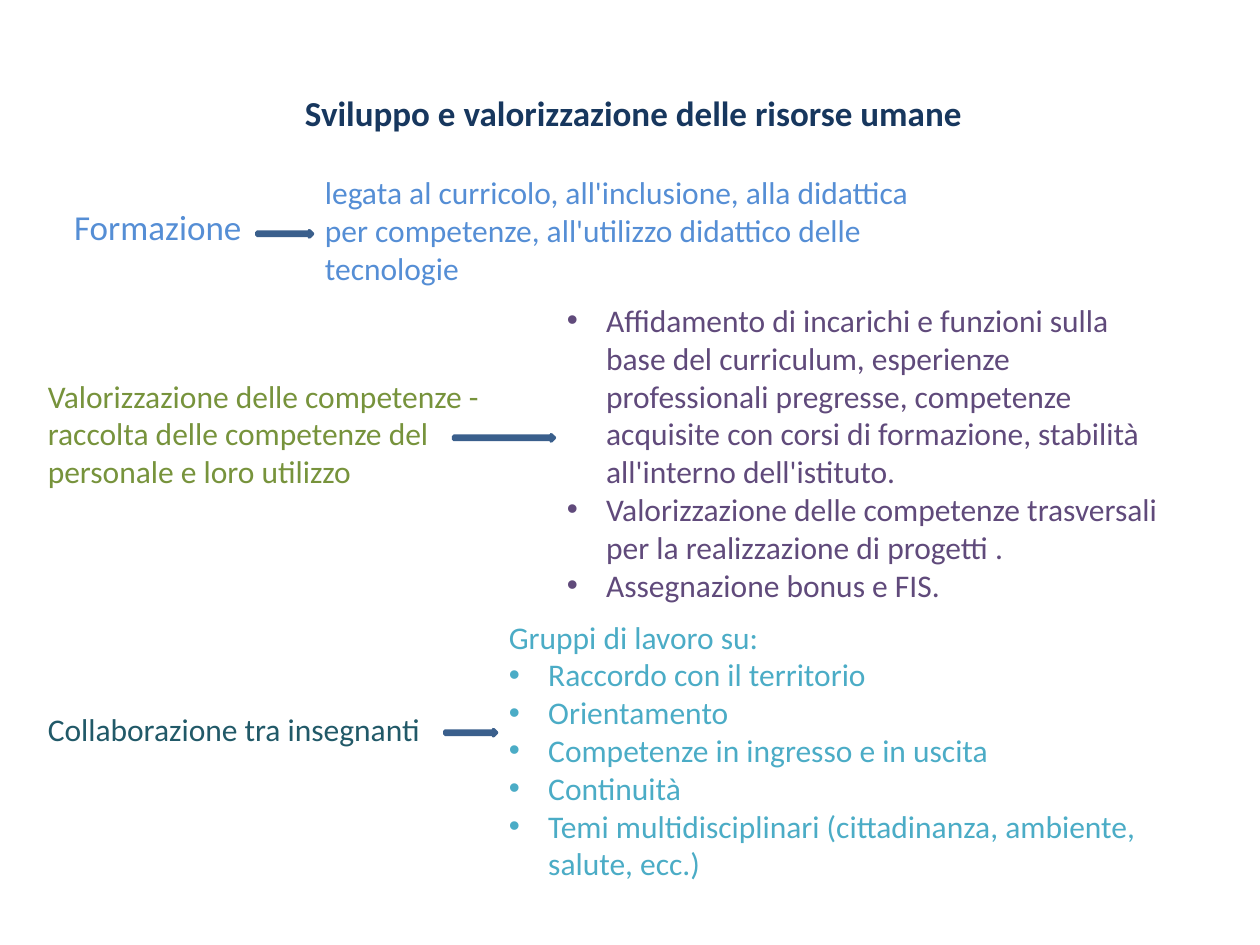
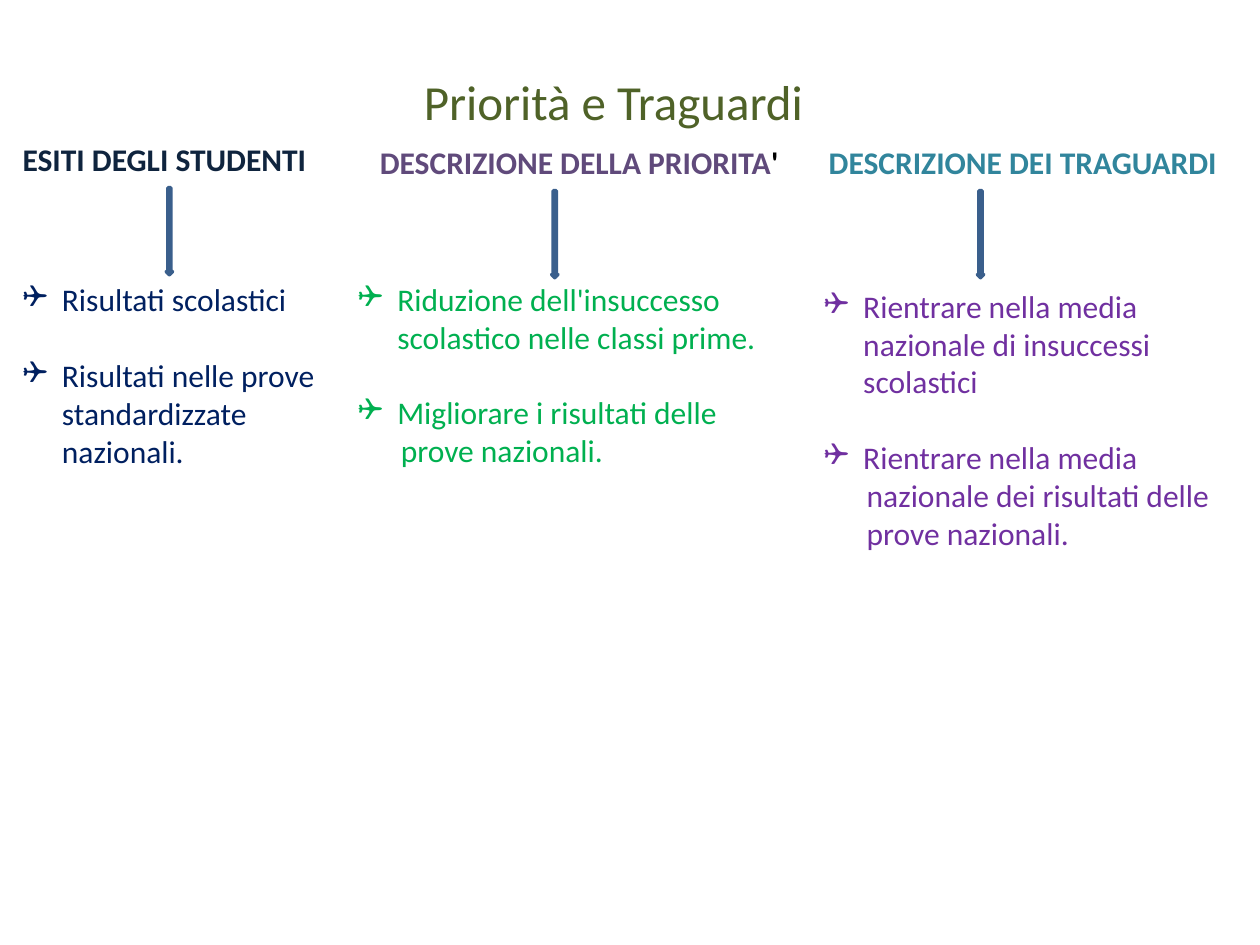
from lxml.etree import SubElement
from pptx import Presentation
from pptx.dml.color import RGBColor
from pptx.enum.shapes import MSO_SHAPE
from pptx.enum.text import MSO_ANCHOR, MSO_AUTO_SIZE, PP_ALIGN
from pptx.oxml.ns import qn
from pptx.util import Pt

FONT = "Calibri"
BODY_SIZE = 18
LINE_HEIGHT = 21.6
INDENT = 22.5
CONTINUATION_INDENT = 24.5
ARROW_THICKNESS = 3.6
ARROW_DROP = 31
ARROW_LENGTH = 49.7

NAVY = RGBColor(0x17, 0x37, 0x5E)
LIGHT_BLUE = RGBColor(0x55, 0x8E, 0xD5)
OLIVE = RGBColor(0x77, 0x93, 0x3C)
DARK_TEAL = RGBColor(0x21, 0x59, 0x68)
PLUM = RGBColor(0x60, 0x4A, 0x7B)
AQUA = RGBColor(0x4B, 0xAC, 0xC6)
DARK_OLIVE = RGBColor(0x4F, 0x62, 0x28)
INK = RGBColor(0x0F, 0x24, 0x3E)
TEAL = RGBColor(0x31, 0x85, 0x9C)
DEEP_BLUE = RGBColor(0x00, 0x20, 0x60)
GREEN = RGBColor(0x00, 0xB0, 0x50)
PURPLE = RGBColor(0x70, 0x30, 0xA0)
BLACK = RGBColor(0, 0, 0)
ARROW_FILL = RGBColor(0x4F, 0x81, 0xBD)
ARROW_LINE = RGBColor(0x3A, 0x5F, 0x8C)

PLAIN, DOT, BOX, SPACED_BOX, CONTINUED = range(5)
BULLETS = {DOT: ("•", "Arial"), BOX: ("❑", "Wingdings"), SPACED_BOX: ("❑", "Wingdings")}

RESOURCES_TITLE = ("Sviluppo e valorizzazione delle risorse umane",
                   (147, 48.6, 430, 32), 20, NAVY, True)
PRIORITIES_TITLE = ("Priorità e Traguardi", (210.5, 37.5, 280, 41), 28, DARK_OLIVE, False)

RESOURCES = [
    {
        "label": [(PLAIN, "Formazione")],
        "label_style": ((35.3, 113.8, 111, 32), LIGHT_BLUE, 20, False),
        "details": [(PLAIN, "legata al curricolo, all'inclusione, alla didattica per competenze, "
                            "all'utilizzo didattico delle tecnologie")],
        "details_style": ((178.6, 95.5, 360, 73), LIGHT_BLUE),
        "arrow_start": (146.9, 131.8),
    },
    {
        "label": [(PLAIN, "Valorizzazione delle competenze -"),
                  (PLAIN, "raccolta delle competenze del personale e loro utilizzo")],
        "label_style": ((20.2, 211.7, 300, 73), OLIVE, BODY_SIZE, True),
        "details": [
            (DOT, "Affidamento di incarichi e funzioni sulla base del curriculum, esperienze "
                  "professionali pregresse, competenze acquisite con corsi di formazione, "
                  "stabilità all'interno dell'istituto."),
            (DOT, "Valorizzazione delle competenze trasversali per la realizzazione di progetti ."),
            (DOT, "Assegnazione bonus e FIS."),
        ],
        "details_style": ((316.8, 168.5, 355, 181), PLUM),
        "arrow_start": (259.2, 248.4),
    },
    {
        "label": [(PLAIN, "Collaborazione tra insegnanti")],
        "label_style": ((20.2, 402.3, 234, 29), DARK_TEAL, BODY_SIZE, False),
        "details": [
            (PLAIN, "Gruppi di lavoro su:"),
            (DOT, "Raccordo con il territorio"),
            (DOT, "Orientamento"),
            (DOT, "Competenze in ingresso e in uscita"),
            (DOT, "Continuità"),
            (DOT, "Temi multidisciplinari (cittadinanza, ambiente, salute, ecc.)"),
        ],
        "details_style": ((283.7, 349.4, 422, 181), AQUA),
        "arrow_start": (254.2, 416.9),
    },
]

PRIORITIES = [
    {
        "heading": [("ESITI DEGLI STUDENTI", INK)],
        "heading_box": (5.8, 76.3, 178, 29),
        "arrow_left": 95,
        "goals": [(BOX, "Risultati scolastici"),
                  (SPACED_BOX, "Risultati nelle prove standardizzate nazionali.")],
        "goals_style": ((5.8, 156.7, 188, 117), DEEP_BLUE),
    },
    {
        "heading": [("DESCRIZIONE DELLA PRIORITA", PLUM), ("'", BLACK)],
        "heading_box": (210, 78, 244, 29),
        "arrow_left": 315.2,
        "goals": [(BOX, "Riduzione dell'insuccesso scolastico nelle classi prime."),
                  (SPACED_BOX, "Migliorare i risultati delle"),
                  (CONTINUED, "prove nazionali.")],
        "goals_style": ((197.5, 156.5, 268.5, 117), GREEN),
    },
    {
        "heading": [("DESCRIZIONE DEI TRAGUARDI", TEAL)],
        "heading_box": (466.5, 78, 238, 29),
        "arrow_left": 558.5,
        "goals": [(BOX, "Rientrare nella media nazionale di insuccessi scolastici"),
                  (SPACED_BOX, "Rientrare nella media"),
                  (CONTINUED, "nazionale dei risultati delle"),
                  (CONTINUED, "prove nazionali.")],
        "goals_style": ((463.7, 160.4, 238.3, 160), PURPLE),
    },
]


def points(box):
    return [Pt(length) for length in box]


def style_font(font, size, color, bold=False):
    font.name = FONT
    font.size = Pt(size)
    font.bold = bold
    font.color.rgb = color


def indent(paragraph, kind):
    properties = paragraph._p.get_or_add_pPr()
    if kind == SPACED_BOX:
        paragraph.space_before = Pt(LINE_HEIGHT)
    if kind in BULLETS:
        symbol, typeface = BULLETS[kind]
        properties.set("marL", str(Pt(INDENT)))
        properties.set("indent", str(-Pt(INDENT)))
        SubElement(properties, qn("a:buFont"), typeface=typeface)
        SubElement(properties, qn("a:buChar"), char=symbol)
    elif kind == CONTINUED:
        properties.set("marL", str(Pt(CONTINUATION_INDENT)))


def add_frame(slide, box, wrap):
    frame = slide.shapes.add_textbox(*points(box)).text_frame
    frame.word_wrap = wrap
    frame.auto_size = MSO_AUTO_SIZE.SHAPE_TO_FIT_TEXT
    return frame


def add_paragraphs(slide, lines, box, color, size=BODY_SIZE, wrap=True):
    frame = add_frame(slide, box, wrap)
    for number, (kind, text) in enumerate(lines):
        paragraph = frame.add_paragraph() if number else frame.paragraphs[0]
        paragraph.text = text
        indent(paragraph, kind)
        style_font(paragraph.font, size, color)


def add_heading(slide, parts, box):
    paragraph = add_frame(slide, box, False).paragraphs[0]
    for text, color in parts:
        run = paragraph.add_run()
        run.text = text
        style_font(run.font, BODY_SIZE, color, True)


def add_arrow(slide, preset, box):
    arrow = slide.shapes.add_shape(preset, *points(box))
    arrow.shadow.inherit = False
    arrow.fill.solid()
    arrow.fill.fore_color.rgb = ARROW_FILL
    arrow.line.color.rgb = ARROW_LINE
    arrow.line.width = Pt(2)


def add_titled_slide(deck, text, box, size, color, bold):
    slide = deck.slides.add_slide(deck.slide_layouts[5])
    title = slide.shapes.title
    title.left, title.top, title.width, title.height = points(box)
    frame = title.text_frame
    frame.text = text
    frame.word_wrap = True
    frame.auto_size = MSO_AUTO_SIZE.NONE
    frame.vertical_anchor = MSO_ANCHOR.TOP
    paragraph = frame.paragraphs[0]
    paragraph.alignment = PP_ALIGN.CENTER
    style_font(paragraph.font, size, color, bold)
    return slide


def build_resources(deck):
    slide = add_titled_slide(deck, *RESOURCES_TITLE)
    for resource in RESOURCES:
        add_paragraphs(slide, resource["label"], *resource["label_style"])
        add_paragraphs(slide, resource["details"], *resource["details_style"])
        left, top = resource["arrow_start"]
        details_left = resource["details_style"][0][0]
        add_arrow(slide, MSO_SHAPE.RIGHT_ARROW,
                  (left, top, details_left - left, ARROW_THICKNESS))


def build_priorities(deck):
    slide = add_titled_slide(deck, *PRIORITIES_TITLE)
    for priority in PRIORITIES:
        add_heading(slide, priority["heading"], priority["heading_box"])
        add_paragraphs(slide, priority["goals"], *priority["goals_style"])
        arrow_top = priority["heading_box"][1] + ARROW_DROP
        add_arrow(slide, MSO_SHAPE.DOWN_ARROW,
                  (priority["arrow_left"], arrow_top, ARROW_THICKNESS, ARROW_LENGTH))


def main():
    deck = Presentation()
    deck.slide_width, deck.slide_height = Pt(720), Pt(540)
    build_resources(deck)
    build_priorities(deck)
    deck.save("out.pptx")


if __name__ == "__main__":
    main()
